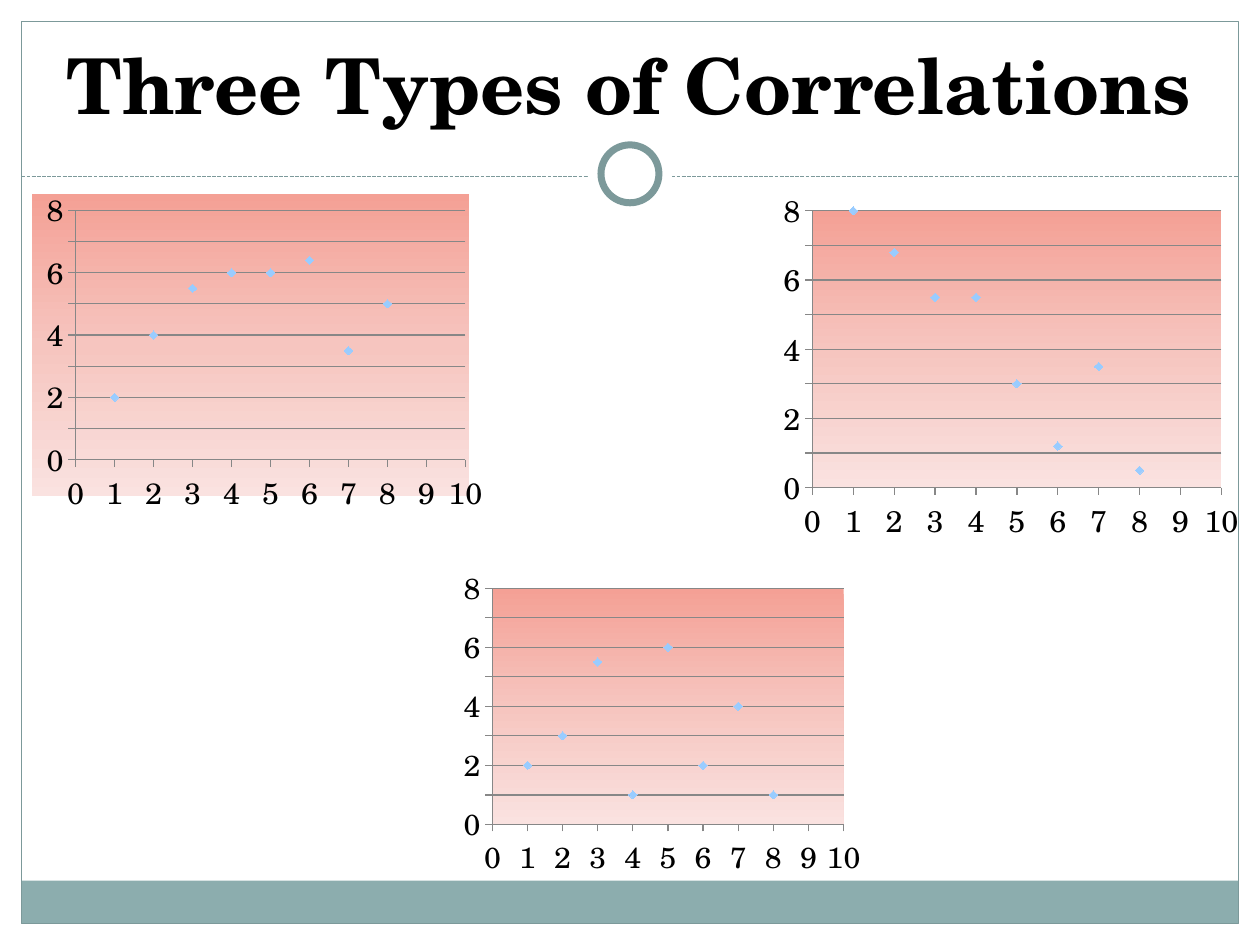
from lxml.etree import SubElement
from pptx import Presentation
from pptx.chart.data import XyChartData
from pptx.dml.color import RGBColor
from pptx.enum.chart import XL_CHART_TYPE, XL_MARKER_STYLE, XL_TICK_MARK
from pptx.enum.dml import MSO_LINE
from pptx.enum.shapes import MSO_CONNECTOR, MSO_SHAPE
from pptx.enum.text import MSO_ANCHOR, MSO_AUTO_SIZE, PP_ALIGN
from pptx.oxml import parse_xml
from pptx.oxml.ns import nsdecls, qn
from pptx.util import Inches, Pt

FONT = "TeX Gyre Schola"
COLORS = {"text": "000000", "white": "FFFFFF", "edge": "7C999A", "band": "8CADAE",
          "grid": "878787", "mark": "99CCFF"}
FADE = ((0, "F4A095"), (50, "F6C5BF"), (100, "FAE2E0"))
WIDE = (0.101, 0.054, 0.891, 0.825)
SMALL = (0.105, 0.051, 0.891, 0.825)
CHARTS = (
    ((0.25, 1.5, 3.58, 2.58), WIDE, True, (2, 4, 5.5, 6, 6, 6.4, 3.5, 5)),
    ((6.08, 1.5, 3.75, 2.81), WIDE, False, (8, 6.8, 5.5, 5.5, 3, 1.2, 3.5, 0.5)),
    ((3.58, 4.5, 3.25, 2.47), SMALL, False, (2, 3, 5.5, 1, 6, 2, 4, 1)),
)


def color(name):
    """Look up a colour by its role."""
    return RGBColor.from_string(COLORS[name])


def add_part(slide, kind, box, fill=None, line=None, width=0.75):
    """Add a flat shape with an optional fill and outline."""
    part = slide.shapes.add_shape(kind, *map(Inches, box))
    part.shadow.inherit = False
    if fill:
        part.fill.solid()
        part.fill.fore_color.rgb = color(fill)
    else:
        part.fill.background()
    if line:
        part.line.color.rgb = color(line)
        part.line.width = Pt(width)
    else:
        part.line.fill.background()


def add_frame(slide, box):
    """Draw the border, foot band, dashed rule and ring."""
    left, top, width, height = box
    foot, rule = 0.34, top + 1.23
    add_part(slide, MSO_SHAPE.RECTANGLE, (left, top + height - foot, width, foot), "band")
    add_part(slide, MSO_SHAPE.RECTANGLE, box, line="edge")
    dash = slide.shapes.add_connector(MSO_CONNECTOR.STRAIGHT, Inches(left), Inches(rule),
                                      Inches(left + width), Inches(rule))
    dash.line.color.rgb = color("edge")
    dash.line.width = Pt(0.75)
    dash.line.dash_style = MSO_LINE.SQUARE_DOT
    SubElement(dash._element.spPr, qn("a:effectLst"))
    mid, center = left + width / 2, top + 1.21
    for size, line in ((0.67, None), (0.46, "edge")):
        spot = (mid - size / 2, center - size / 2, size, size)
        add_part(slide, MSO_SHAPE.OVAL, spot, "white", line, 4)


def add_title(slide, box, text):
    """Place and format the title."""
    title = slide.shapes.title
    title.left, title.top, title.width, title.height = map(Inches, box)
    frame = title.text_frame
    frame.text = text
    frame.word_wrap = True
    frame.auto_size = MSO_AUTO_SIZE.NONE
    frame.vertical_anchor = MSO_ANCHOR.BOTTOM
    para = frame.paragraphs[0]
    para.alignment = PP_ALIGN.CENTER
    para.font.name, para.font.size, para.font.bold = FONT, Pt(44), True
    para.font.color.rgb = color("text")


def make_fade():
    """Return chart shape properties with the downward gradient."""
    stops = "".join(f'<a:gs pos="{pos * 1000}"><a:srgbClr val="{tone}"/></a:gs>'
                    for pos, tone in FADE)
    return parse_xml(f'<c:spPr {nsdecls("c", "a")}><a:gradFill><a:gsLst>{stops}</a:gsLst>'
                     '<a:lin ang="5400000" scaled="0"/></a:gradFill>'
                     '<a:ln><a:noFill/></a:ln></c:spPr>')


def make_layout(plot):
    """Return a manual layout for the inner plot area."""
    sides = "".join(f'<c:{key} val="{val}"/>' for key, val in zip("xywh", plot))
    return parse_xml(f'<c:layout {nsdecls("c")}><c:manualLayout>'
                     '<c:layoutTarget val="inner"/><c:xMode val="edge"/>'
                     f'<c:yMode val="edge"/>{sides}</c:manualLayout></c:layout>')


def set_axis(axis, top, grid):
    """Scale an axis from zero in steps of one."""
    axis.minimum_scale, axis.maximum_scale, axis.major_unit = 0, top, 1
    axis.major_tick_mark = XL_TICK_MARK.OUTSIDE
    axis.minor_tick_mark = XL_TICK_MARK.NONE
    axis.has_major_gridlines = grid
    axis.format.line.color.rgb = color("grid")
    if grid:
        axis.major_gridlines.format.line.color.rgb = color("grid")


def add_scatter(slide, box, plot, full, vals):
    """Add a scatter chart with a gradient behind the chart or its plot."""
    data = XyChartData()
    points = data.add_series("Series 1")
    for x, y in enumerate(vals, 1):
        points.add_data_point(x, y)
    chart = slide.shapes.add_chart(XL_CHART_TYPE.XY_SCATTER, *map(Inches, box), data).chart
    chart.has_title = chart.has_legend = False
    chart.font.name, chart.font.size = FONT, Pt(18)
    chart.font.color.rgb = color("text")
    set_axis(chart.category_axis, 10, False)
    set_axis(chart.value_axis, 8, True)
    chart.plots[0].vary_by_categories = False
    series = chart.plots[0].series[0]
    series.smooth = False
    series.format.line.fill.background()
    series.marker.style, series.marker.size = XL_MARKER_STYLE.DIAMOND, 5
    series.marker.format.fill.solid()
    series.marker.format.fill.fore_color.rgb = color("mark")
    series.marker.format.line.color.rgb = color("mark")
    body = chart._chartSpace.find(qn("c:chart"))
    area = body.find(qn("c:plotArea"))
    for old in area.findall(qn("c:layout")):
        area.remove(old)
    area.insert(0, make_layout(plot))
    if full:
        body.addnext(make_fade())
    else:
        area.append(make_fade())


def main():
    """Build and save the slide."""
    deck = Presentation()
    deck.slide_width, deck.slide_height = Inches(10), Inches(7.5)
    slide = deck.slides.add_slide(deck.slide_layouts[5])
    add_frame(slide, (0.17, 0.17, 9.66, 7.16))
    add_title(slide, (0.33, 0.25, 9.33, 0.83), "Three Types of Correlations")
    for chart in CHARTS:
        add_scatter(slide, *chart)
    deck.save("out.pptx")


if __name__ == "__main__":
    main()
